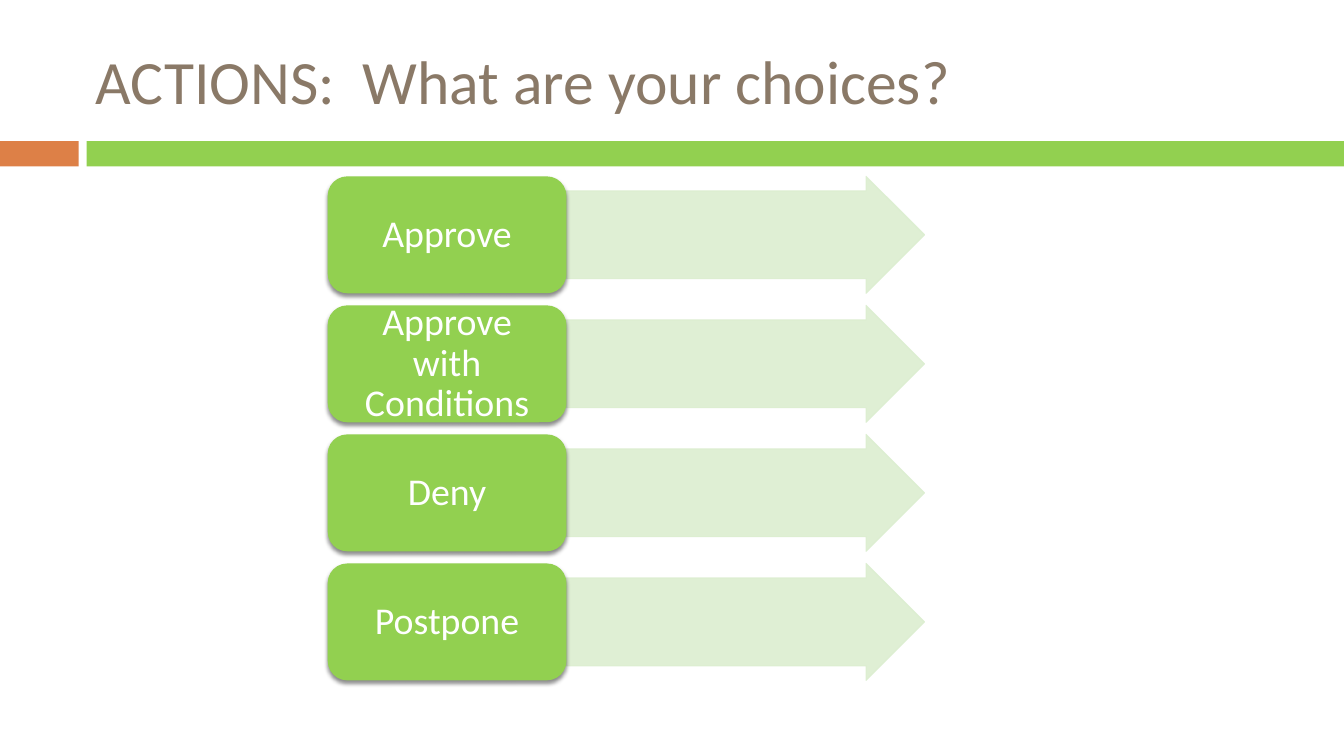
from lxml import etree
from pptx import Presentation
from pptx.dml.color import RGBColor
from pptx.enum.shapes import MSO_SHAPE as Shape
from pptx.enum.text import MSO_ANCHOR as Anchor, PP_ALIGN as Align
from pptx.oxml.ns import qn
from pptx.util import Inches, Pt

GREEN, ORANGE, PALE, BROWN, WHITE = "92D050", "DD8047", "DCEED0", "8A7967", "FFFFFF"
CHOICES = ["Approve", "Approve with Conditions", "Deny", "Postpone"]


def color(value):
    return RGBColor.from_string(value)


def set_format(target, values):
    for name, value in values.items():
        setattr(target, name, value)


def write(shape, text, size, value, align, margins):
    frame = shape.text_frame
    set_format(frame, {"word_wrap": True, "vertical_anchor": Anchor.MIDDLE, **margins})
    para = frame.paragraphs[0]
    para.alignment = align
    span = para.add_run()
    span.text = text
    set_format(span.font, {"name": "Calibri", "size": Pt(size), "bold": False})
    span.font.color.rgb = color(value)
    return para


def add_block(page, kind, box, fill):
    block = page.shapes.add_shape(kind, *map(Inches, box))
    block.shadow.inherit = False
    block.fill.solid()
    block.fill.fore_color.rgb = color(fill)
    block.line.fill.background()
    return block


def add_alpha(parent, percent):
    for tint in parent.iter(qn("a:srgbClr")):
        etree.SubElement(tint, qn("a:alpha"), val=str(percent * 1000))


def add_soft_shadow(block):
    effects = block._element.spPr.find(qn("a:effectLst"))
    shadow = etree.SubElement(
        effects, qn("a:outerShdw"), blurRad=str(Pt(3)), dist=str(Pt(2.4)),
        dir="5400000", rotWithShape="0")
    etree.SubElement(shadow, qn("a:srgbClr"), val="000000")
    add_alpha(shadow, 45)


def add_header(page, box, text):
    left, top, width, height = box
    # Title
    title = page.shapes.title
    places = (left + 0.85, top + 0.25, 11.89, 1.08)
    set_format(title, dict(zip(("left", "top", "width", "height"), map(Inches, places))))
    write(title, text, 44, BROWN, Align.LEFT, {})
    # Two-colour band along the bottom edge
    band, start = 0.25, 0.86
    band_top = top + height - band
    add_block(page, Shape.RECTANGLE, (left, band_top, 0.78, band), ORANGE)
    add_block(page, Shape.RECTANGLE, (left + start, band_top, width - start, band), GREEN)


def add_choice(page, box, text):
    left, top, width, height = box
    label_width = width * 0.4
    # Arrow
    arrow = add_block(page, Shape.RIGHT_ARROW,
                      (left + label_width, top, width - label_width, height), PALE)
    arrow.adjustments[0] = 0.75
    arrow.adjustments[1] = 0.5
    arrow.line.color.rgb = color(PALE)
    arrow.line.width = Pt(0.79)
    add_alpha(arrow._element.spPr, 90)
    # Label
    label = add_block(page, Shape.ROUNDED_RECTANGLE, (left, top, label_width, height), GREEN)
    add_soft_shadow(label)
    side, edge = Inches(0.11), Inches(0.06)
    margins = {"margin_left": side, "margin_right": side,
               "margin_top": edge, "margin_bottom": edge}
    para = write(label, text, 27, WHITE, Align.CENTER, margins)
    para.line_spacing = 0.9


def add_choices(page, box, choices):
    left, top, width, height = box
    gap = 0.12
    row = (height - gap * (len(choices) - 1)) / len(choices)
    for index, choice in enumerate(choices):
        add_choice(page, (left, top + index * (row + gap), width, row), choice)


def main():
    deck = Presentation()
    deck.slide_width, deck.slide_height = Inches(13.33), Inches(7.5)
    page = deck.slides.add_slide(deck.slide_layouts[5])
    add_header(page, (0, 0, 13.33, 1.65), "ACTIONS:  What are your choices?")
    add_choices(page, (3.25, 1.75, 5.92, 5), CHOICES)
    deck.save("out.pptx")


if __name__ == "__main__":
    main()
